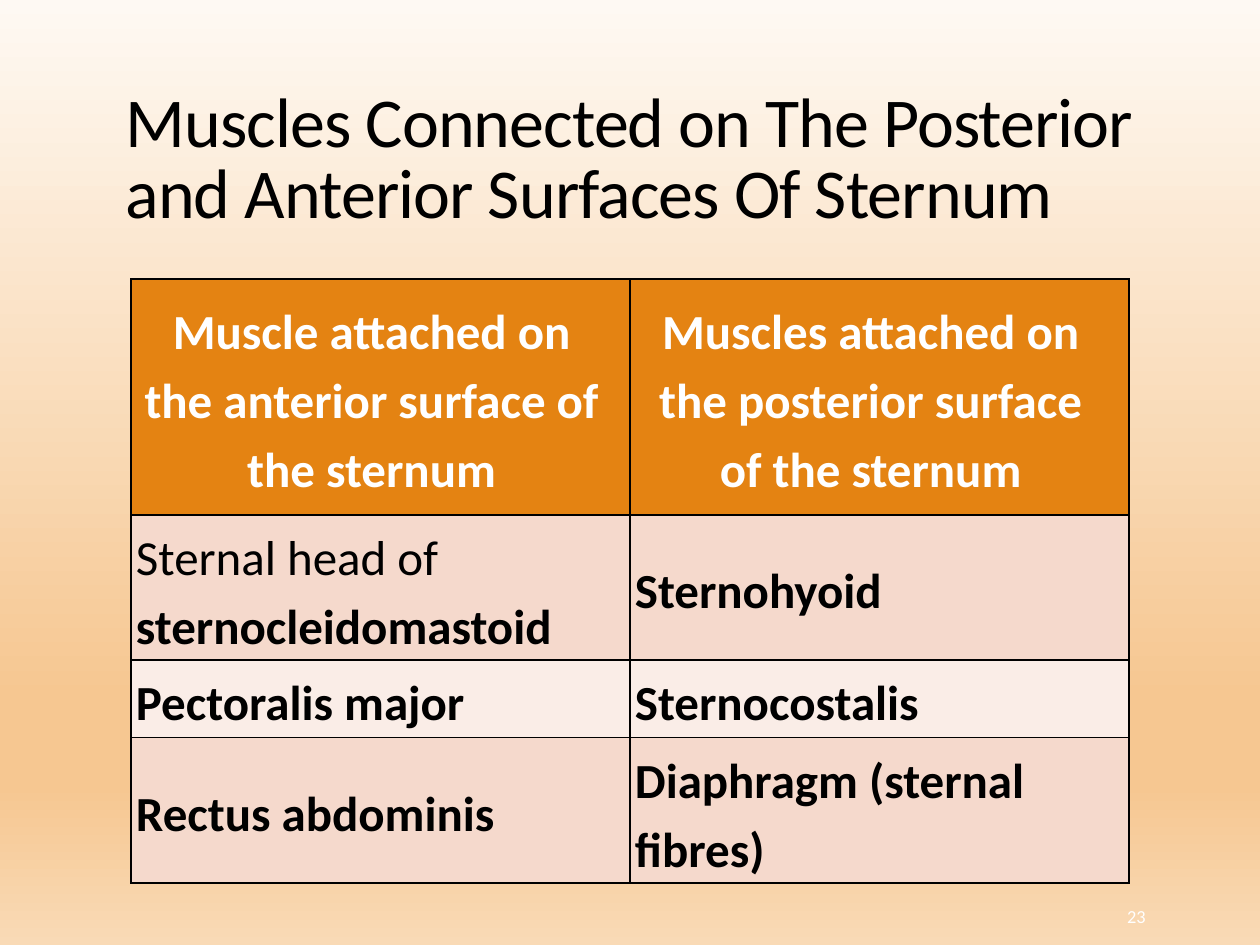
"""Build a slide with a table of the muscles attached to the sternum."""
from lxml import etree
from pptx import Presentation
from pptx.dml.color import RGBColor as RGB
from pptx.enum.text import MSO_ANCHOR as ANCHOR, PP_ALIGN as ALIGN
from pptx.oxml.ns import qn
from pptx.util import Pt

PX = 914400 // 126
THEME = {
    "font": "Calibri", "ink": "000000", "light": "FFFFFF", "head": "E48312",
    "bands": ["F5D9CC", "FAEDE7"], "title_pt": 40, "cell_pt": 28, "number_pt": 10.5,
    "backdrop": [(0, "FEF9F3"), (74, "F6C791"), (83, "F6C791"), (100, "F9DAB6")],
}


def set_font(font, size, color, bold=False):
    font.name, font.size, font.bold = THEME["font"], Pt(size), bold
    font.color.rgb = RGB.from_string(color)


def add_text(s, box, text, size, color, anchor, align):
    tf = s.shapes.add_textbox(*(v * PX for v in box)).text_frame
    tf.word_wrap, tf.vertical_anchor = True, anchor
    p = tf.paragraphs[0]
    p.text, p.alignment = text, align
    set_font(p.font, size, color)
    return p


prs = Presentation()
prs.slide_width, prs.slide_height = 1260 * PX, 945 * PX
s = prs.slides.add_slide(prs.slide_layouts[6])

fill = s.background.fill
fill.gradient()
fill.gradient_angle = 270
stops = s.element.find(".//" + qn("a:gsLst"))
stops.clear()
for pos, color in THEME["backdrop"]:
    gs = etree.SubElement(stops, qn("a:gs"), pos=str(pos * 1000))
    etree.SubElement(gs, qn("a:srgbClr"), val=color)

title = add_text(s, (113, 39, 1040, 200),
                 "Muscles Connected on The Posterior and Anterior Surfaces Of Sternum",
                 THEME["title_pt"], THEME["ink"], ANCHOR.BOTTOM, ALIGN.LEFT)
title.line_spacing = 0.85
title.runs[0].font._element.set("spc", "-50")

rows = [
    ["Muscle attached on the anterior surface of the sternum",
     "Muscles attached on the posterior surface of the sternum"],
    ["Sternal head of |sternocleidomastoid", "Sternohyoid"],
    ["Pectoralis major", "Sternocostalis"],
    ["Rectus abdominis", "Diaphragm (sternal fibres)"],
]
heights = [236, 120, 62, 120]
table = s.shapes.add_table(4, 2, 131 * PX, 279 * PX, 998 * PX, sum(heights) * PX).table
for i, (height, texts) in enumerate(zip(heights, rows)):
    table.rows[i].height = height * PX
    header = i == 0
    for j, text in enumerate(texts):
        cell = table.cell(i, j)
        cell.vertical_anchor = ANCHOR.MIDDLE
        cell.margin_left = cell.margin_top = cell.margin_bottom = 5 * PX
        cell.margin_right = (23 if header else 5) * PX
        p = cell.text_frame.paragraphs[0]
        p.alignment = ALIGN.CENTER if header else ALIGN.LEFT
        p.line_spacing, p.space_after = 1.15, Pt(10)
        set_font(p.font, THEME["cell_pt"], THEME["light" if header else "ink"], True)
        parts = text.split("|")
        for k, part in enumerate(parts):
            r = p.add_run()
            r.text = part
            r.font.bold = k == len(parts) - 1
        tc_pr = cell._tc.get_or_add_tcPr()
        for side in ("lnL", "lnR", "lnT", "lnB"):
            ln = etree.SubElement(tc_pr, qn("a:" + side), w=str(Pt(1)))
            solid = etree.SubElement(ln, qn("a:solidFill"))
            etree.SubElement(solid, qn("a:srgbClr"), val=THEME["ink"])
        cell.fill.solid()
        color = THEME["head"] if header else THEME["bands"][(i - 1) % 2]
        cell.fill.fore_color.rgb = RGB.from_string(color)

add_text(s, (1060, 894, 98, 44), "23", THEME["number_pt"], THEME["light"],
         ANCHOR.MIDDLE, ALIGN.RIGHT)

prs.save("out.pptx")
